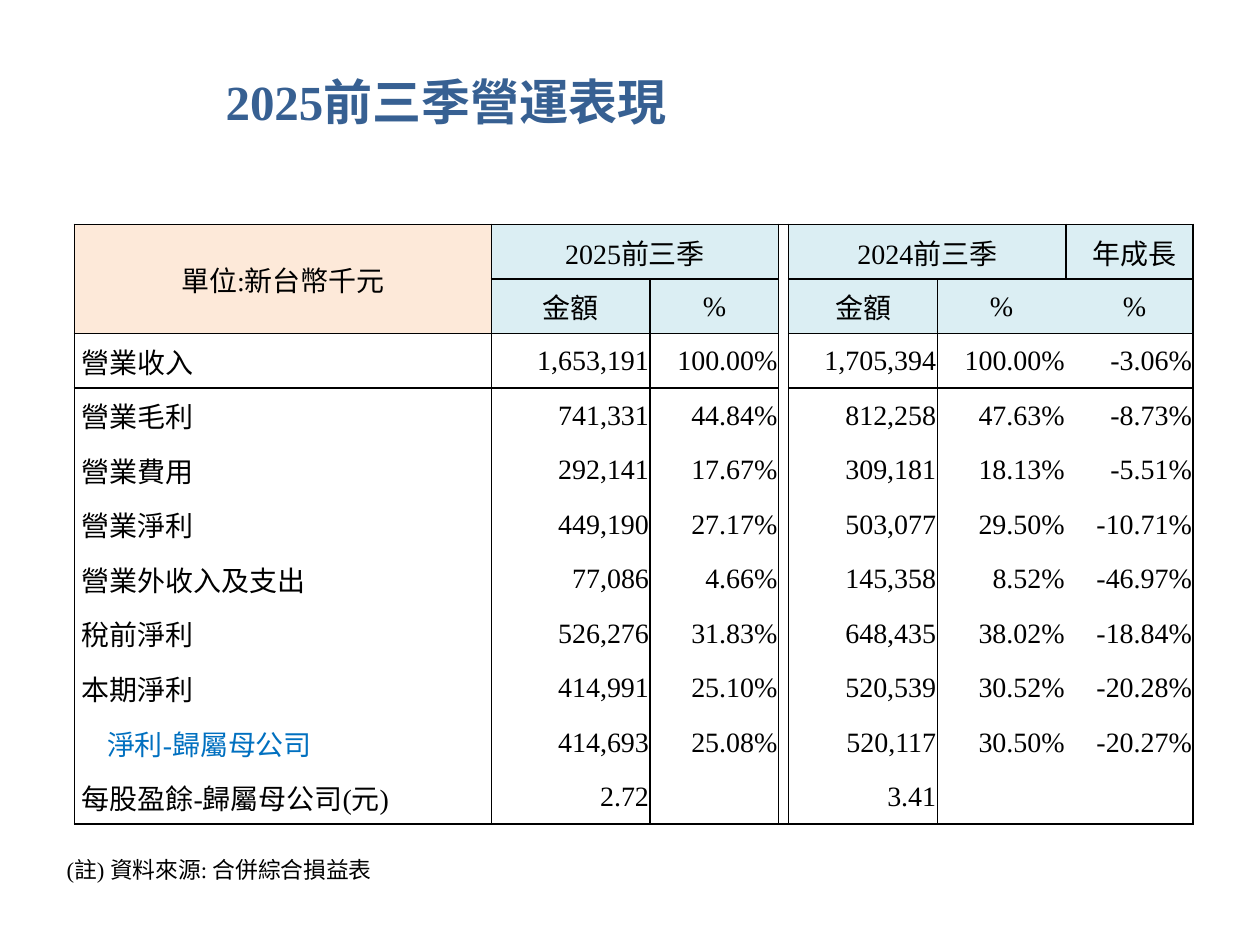
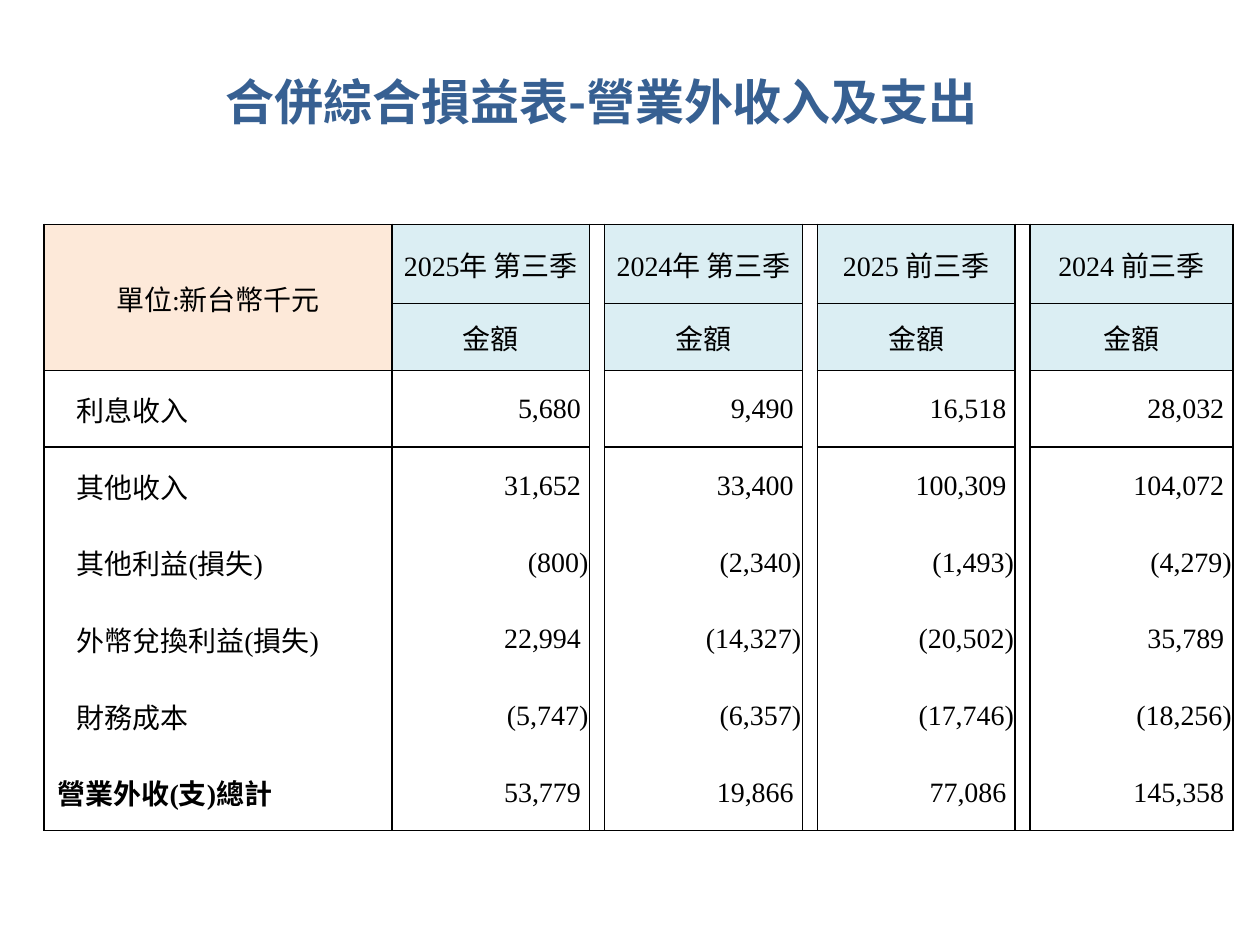
import pptx
import pptx.dml.color
import pptx.enum.text
import pptx.oxml
import pptx.oxml.ns
import pptx.util
from pptx.util import Inches

LEFT = pptx.enum.text.PP_ALIGN.LEFT
CENTER = pptx.enum.text.PP_ALIGN.CENTER
RIGHT = pptx.enum.text.PP_ALIGN.RIGHT
PLAIN_TABLE = "{2D5ABB26-0587-4C30-8999-92F81FD0307C}"
SPACE = 0.05
GAP = 0.08
UNIT = "單位:新台幣千元"


def color(value):
    return pptx.dml.color.RGBColor.from_string(value)


class Report:
    serif = "Times New Roman"
    sans = "Noto Sans CJK SC"
    title_color = "376092"
    ink = "000000"
    accent = "0070C0"
    label_fill = "FDE9D9"
    header_fill = "DBEEF3"

    def __init__(self):
        self.deck = pptx.Presentation()
        self.deck.slide_width = Inches(10)
        self.deck.slide_height = Inches(7.5)
        self.page = None

    def style(self, frame, size, ink, bold=False, font=serif, align=LEFT):
        for para in frame.paragraphs:
            para.alignment = align
            for span in para.runs:
                span.font.name = font
                span.font.size = pptx.util.Pt(size)
                span.font.bold = bold
                span.font.color.rgb = color(ink)

    def add_page(self, title, width, font):
        self.page = self.deck.slides.add_slide(self.deck.slide_layouts[5])
        box = self.page.shapes.title
        box.left, box.top = Inches(1.69), Inches(0.52)
        box.width, box.height = Inches(width), Inches(0.57)
        frame = box.text_frame
        frame.text = title
        frame.word_wrap = True
        frame.auto_size = pptx.enum.text.MSO_AUTO_SIZE.NONE
        frame.vertical_anchor = pptx.enum.text.MSO_ANCHOR.TOP
        self.style(frame, 28, self.title_color, True, font)

    def add_note(self, text, left, top, width, height):
        box = self.page.shapes.add_textbox(Inches(left), Inches(top), Inches(width), Inches(height))
        box.text_frame.text = text
        box.text_frame.word_wrap = True
        self.style(box.text_frame, 13, self.ink)

    def fill_cell(self, cell, text, align, indent=0, ink=ink, bold=False, fill=None):
        cell.text_frame.text = text
        cell.vertical_anchor = pptx.enum.text.MSO_ANCHOR.MIDDLE
        cell.margin_left = Inches(0.01 + indent * (align == LEFT))
        cell.margin_right = Inches(0.01 + indent * (align == RIGHT))
        cell.margin_top, cell.margin_bottom = Inches(0.01), 0
        if fill:
            cell.fill.solid()
            cell.fill.fore_color.rgb = color(fill)
        else:
            cell.fill.background()
        self.style(cell.text_frame, 16, ink, bold, align=align)

    def outline(self, table, top, bottom, first, last):
        for row in range(top, bottom + 1):
            for column in range(first, last + 1):
                edges = {"lnL": column == first, "lnR": column == last,
                         "lnT": row == top, "lnB": row == bottom}
                drawn = [name for name, outer in edges.items() if outer]
                properties = table.cell(row, column)._tc.get_or_add_tcPr()
                for place, name in enumerate(drawn):
                    line = pptx.oxml.parse_xml(
                        f'<a:{name} {pptx.oxml.ns.nsdecls("a")} w="12700"><a:solidFill>'
                        f'<a:srgbClr val="{self.ink}"/></a:solidFill></a:{name}>')
                    properties.insert(place, line)

    def add_statement(self, left, widths, heights, headers, lines, blocks, merges, pad_positive=False):
        shape = self.page.shapes.add_table(
            len(heights), len(widths), Inches(left), Inches(1.78),
            Inches(sum(widths)), Inches(sum(heights)))
        table = shape.table
        table.first_row = table.horz_banding = False
        table._tbl.tblPr.find(pptx.oxml.ns.qn("a:tableStyleId")).text = PLAIN_TABLE
        for column, width in zip(table.columns, widths):
            column.width = Inches(width)
        for row, height in zip(table.rows, heights):
            row.height = Inches(height)

        gaps = [first for first, last in blocks if widths[first] == GAP]
        for row, texts in enumerate(headers):
            for column, text in enumerate(texts):
                fill = self.label_fill if column == 0 else self.header_fill
                self.fill_cell(table.cell(row, column), text, CENTER,
                               fill=None if column in gaps else fill)
        for row, (label, spaces, look, values) in enumerate(lines, len(headers)):
            self.fill_cell(table.cell(row, 0), label, LEFT, spaces * SPACE, **look)
            values = iter(values)
            for column in range(1, len(widths)):
                text = "" if widths[column] == GAP else next(values, "")
                indent = 0.06 if pad_positive and not text.endswith(")") else 0
                self.fill_cell(table.cell(row, column), text, RIGHT, indent)

        end = len(heights) - 1
        for first, last in blocks:
            if first in gaps:
                self.outline(table, 0, end, first, last)
                continue
            for top, bottom in [(0, 1)] if first == 0 else [(0, 0), (1, 1)]:
                self.outline(table, top, bottom, first, last)
            self.outline(table, 2, end, first, last)
        for start, stop in merges:
            table.cell(*start).merge(table.cell(*stop))


def add_performance(report):
    report.add_page("2025前三季營運表現", 3.74, report.serif)
    report.add_note("(註) 資料來源: 合併綜合損益表", 0.43, 6.74, 2.65, 0.32)
    lines = [
        ("營業收入", 1, {}, ["1,653,191", "100.00%", "1,705,394", "100.00%", "-3.06%"]),
        ("營業毛利", 1, {}, ["741,331", "44.84%", "812,258", "47.63%", "-8.73%"]),
        ("營業費用", 1, {}, ["292,141", "17.67%", "309,181", "18.13%", "-5.51%"]),
        ("營業淨利", 1, {}, ["449,190", "27.17%", "503,077", "29.50%", "-10.71%"]),
        ("營業外收入及支出", 1, {}, ["77,086", "4.66%", "145,358", "8.52%", "-46.97%"]),
        ("稅前淨利", 1, {}, ["526,276", "31.83%", "648,435", "38.02%", "-18.84%"]),
        ("本期淨利", 1, {}, ["414,991", "25.10%", "520,539", "30.52%", "-20.28%"]),
        ("淨利-歸屬母公司", 5, {"ink": report.accent},
         ["414,693", "25.08%", "520,117", "30.50%", "-20.27%"]),
        ("每股盈餘-歸屬母公司(元)", 1, {}, ["2.72", "", "3.41"]),
    ]
    headers = [
        [UNIT, "2025前三季", "", "", "2024前三季", "", "", "年成長"],
        ["", "金額", "%", "", "金額", "%", "", "%"],
    ]
    report.add_statement(
        0.59, [3.31, 1.26, 1.02, GAP, 1.18, 1.02, GAP, 0.93], [4.76 / 11] * 11,
        headers, lines, blocks=[(0, 0), (1, 2), (3, 3), (4, 7)],
        merges=[((0, 0), (1, 0)), ((0, 1), (0, 2)), ((0, 4), (0, 5))])


def add_non_operating(report):
    report.add_page("合併綜合損益表-營業外收入及支出", 8.11, report.sans)
    lines = [
        ("利息收入", 5, {}, ["5,680", "9,490", "16,518", "28,032"]),
        ("其他收入", 5, {}, ["31,652", "33,400", "100,309", "104,072"]),
        ("其他利益(損失)", 5, {}, ["(800)", "(2,340)", "(1,493)", "(4,279)"]),
        ("外幣兌換利益(損失)", 5, {}, ["22,994", "(14,327)", "(20,502)", "35,789"]),
        ("財務成本", 5, {}, ["(5,747)", "(6,357)", "(17,746)", "(18,256)"]),
        ("營業外收(支)總計", 2, {"bold": True}, ["53,779", "19,866", "77,086", "145,358"]),
    ]
    headers = [
        [UNIT, "2025年 第三季", "", "2024年 第三季", "", "2025 前三季", "", "2024 前三季"],
        [""] + ["金額", ""] * 3 + ["金額"],
    ]
    report.add_statement(
        0.35, [2.76] + [1.57, GAP] * 3 + [1.61], [0.63, 0.53] + [3.65 / 6] * 6,
        headers, lines, blocks=[(column, column) for column in range(8)],
        merges=[((0, 0), (1, 0))], pad_positive=True)


def main():
    report = Report()
    add_performance(report)
    add_non_operating(report)
    report.deck.save("out.pptx")


if __name__ == "__main__":
    main()
